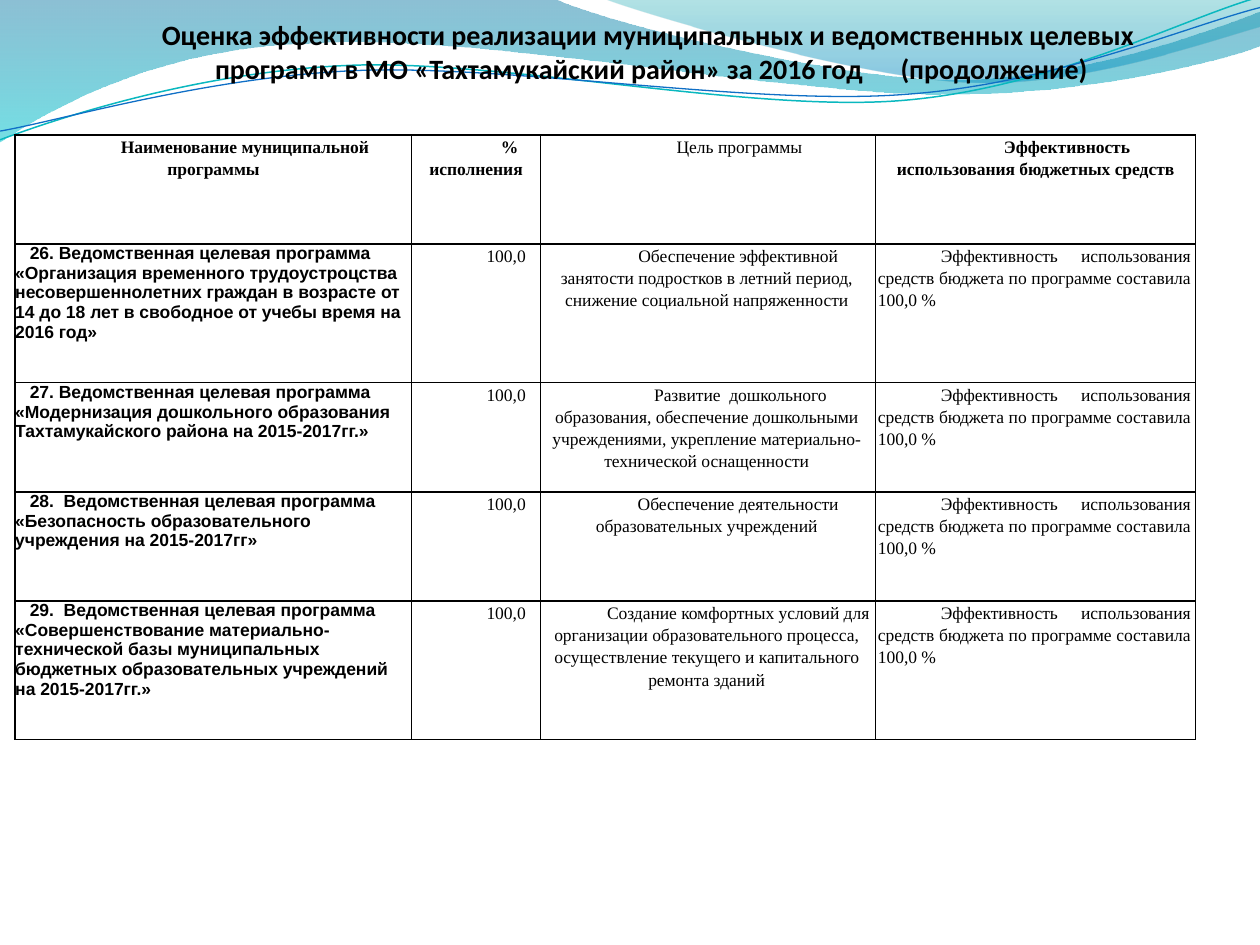
import dataclasses

import pptx
import pptx.dml.color
import pptx.enum.text
import pptx.oxml
import pptx.oxml.ns
import pptx.util

Pt = pptx.util.Pt
Align = pptx.enum.text.PP_ALIGN
qn = pptx.oxml.ns.qn


@dataclasses.dataclass(frozen=True)
class Theme:
    ink: str = "000000"
    teal_line: str = "0AB8BF"
    blue_line: str = "0F6FC6"
    back_wave: tuple = ((0, "0074A1", 45), (1, "00C6CF", 55))
    front_wave: tuple = ((0, "00A1A9", 30), (0.8, "008BBF", 45))
    title_font: str = "Calibri"
    name_font: str = "Arial"
    body_font: str = "Times New Roman"
    title_size: float = 16
    body_size: float = 10
    border: float = 1


THEME = Theme()

BACK_WAVE = [
    (0, 0), (316.8, -0.7),
    (342.7, 12.2, 478.1, 45.4, 545.8, 45.4), (614.2, 45.4, 689.8, 18.7, 720, 6.5),
    (720.7, 25.9), (707.8, 31.7, 626.4, 54.7, 537.1, 54),
    (447.8, 54, 275, 20.2, 185, 24.5), (92.9, 25.9, 33.1, 59.8, -0.7, 81.4),
]
FRONT_WAVE = [
    (344.9, -0.7), (366.5, 7.9, 491, 44.6, 553.7, 46.8),
    (616.3, 49.7, 691.9, 23, 720, 15.1), (720, 0),
]
TEAL_CURVE = [
    (0, 79.9), (34.6, 67, 113.8, 41, 199.4, 37.4),
    (284.4, 33.8, 427, 64.1, 513.4, 57.6), (599.8, 51.1, 675.4, 10.8, 718.6, -1.4),
]
BLUE_CURVE = [
    (0, 74.9), (33.8, 69.1, 118.1, 43.9, 203.8, 40.3),
    (290.2, 36.7, 429.8, 60.5, 516.2, 54), (601.9, 48.2, 677.5, 15.1, 720, 4.3),
]

COLUMN_WIDTHS = (226.5, 73.6, 191.5, 182.9)
ROW_HEIGHTS = (62.4, 79.2, 62.4, 62.4, 79.2)
HEADINGS = (
    ("Наименование муниципальной программы", True),
    (" % исполнения", True),
    ("Цель программы", False),
    ("Эффективность использования бюджетных средств", True),
)
PROGRAMMES = (
    ("26. Ведомственная целевая программа «Организация временного трудоустроцства "
     "несовершеннолетних граждан в возрасте от 14 до 18 лет в свободное от учебы время на 2016 год»",
     "Обеспечение эффективной занятости подростков в летний период, "
     "снижение социальной напряженности"),
    ("27. Ведомственная целевая программа «Модернизация дошкольного образования "
     "Тахтамукайского района на 2015-2017гг.»",
     " Развитие  дошкольного образования, обеспечение дошкольными учреждениями, "
     "укрепление материально-технической оснащенности"),
    ("28.  Ведомственная целевая программа «Безопасность образовательного "
     "учреждения на 2015-2017гг»",
     "Обеспечение деятельности образовательных учреждений"),
    ("29.  Ведомственная целевая программа «Совершенствование материально-технической базы "
     "муниципальных бюджетных образовательных учреждений на 2015-2017гг.»",
     "Создание комфортных условий для организации образовательного процесса, "
     "осуществление текущего и капитального ремонта зданий"),
)
EXECUTION = "100,0"
EFFICIENCY = "Эффективность использования средств бюджета по программе составила 100,0 %"


def rgb(code):
    return pptx.dml.color.RGBColor.from_string(code)


def add_outline(page, steps, close):
    points = [(Pt(x), Pt(y)) for step in steps for x, y in zip(step[::2], step[1::2])]
    builder = page.shapes.build_freeform(*points[0])
    builder.add_line_segments(points[1:], close=close)
    shape = builder.convert_to_shape()
    shape.shadow.inherit = False
    segments = iter(list(shape._element.iter(qn("a:lnTo"))))
    for step in steps[1:]:
        segment = next(segments)
        if len(step) == 6:
            curve = pptx.oxml.parse_xml(f'<a:cubicBezTo {pptx.oxml.ns.nsdecls("a")}/>')
            segment.addprevious(curve)
            for part in (segment, next(segments), next(segments)):
                curve.append(part[0])
                part.getparent().remove(part)
    return shape


def add_wave(page, steps, stops):
    shape = add_outline(page, steps, True)
    shape.line.fill.background()
    shape.fill.gradient()
    shape.fill.gradient_angle = 270
    for stop, (position, code, _) in zip(shape.fill.gradient_stops, stops):
        stop.position = position
        stop.color.rgb = rgb(code)
    colours = shape._element.spPr.iter(qn("a:srgbClr"))
    for colour, (_, _, opacity) in zip(list(colours), stops):
        colour.append(pptx.oxml.parse_xml(
            f'<a:alpha {pptx.oxml.ns.nsdecls("a")} val="{opacity * 1000}"/>'))


def add_curve(page, steps, code, width):
    shape = add_outline(page, steps, False)
    shape.fill.background()
    shape.line.color.rgb = rgb(code)
    shape.line.width = Pt(width)


def add_span(para, text, font, size, bold):
    span = para.add_run()
    span.text = text
    span.font.name = font
    span.font.size = Pt(size)
    span.font.bold = bold
    span.font.color.rgb = rgb(THEME.ink)
    return span


def draw_borders(cell):
    properties = cell._tc.get_or_add_tcPr()
    for side in "LRTB":
        properties.append(pptx.oxml.parse_xml(
            f'<a:ln{side} {pptx.oxml.ns.nsdecls("a")} w="{Pt(THEME.border)}"><a:solidFill>'
            f'<a:srgbClr val="{THEME.ink}"/></a:solidFill></a:ln{side}>'))
    cell.fill.background()


def fill_cell(cell, text, font=THEME.body_font, bold=False, align=Align.CENTER,
              indent=36, spacing=1.15, left=1.4, right=2.9):
    draw_borders(cell)
    cell.margin_left, cell.margin_right = Pt(left), Pt(right)
    cell.margin_top = cell.margin_bottom = 0
    para = cell.text_frame.paragraphs[0]
    para.alignment = align
    para.line_spacing = spacing
    layout = para._p.get_or_add_pPr()
    layout.set("marL", "0")
    layout.set("indent", str(Pt(indent)))
    add_span(para, text, font, THEME.body_size, bold)


def add_programme_table(page):
    frame = page.shapes.add_table(
        len(ROW_HEIGHTS), len(COLUMN_WIDTHS), Pt(8.7), Pt(77.1),
        Pt(sum(COLUMN_WIDTHS)), Pt(sum(ROW_HEIGHTS)))
    table = frame.table
    table.first_row = table.horz_banding = False
    for column, width in zip(table.columns, COLUMN_WIDTHS):
        column.width = Pt(width)
    for row, height in zip(table.rows, ROW_HEIGHTS):
        row.height = Pt(height)
    for index, (text, bold) in enumerate(HEADINGS):
        fill_cell(table.cell(0, index), text, bold=bold, left=2.9)
    for index, (name, goal) in enumerate(PROGRAMMES, start=1):
        fill_cell(table.cell(index, 0), name, THEME.name_font, True, Align.LEFT, 8.3, 1, 0, 0)
        fill_cell(table.cell(index, 1), EXECUTION)
        fill_cell(table.cell(index, 2), goal)
        fill_cell(table.cell(index, 3), EFFICIENCY, align=Align.JUSTIFY)


def set_title(page):
    box = page.shapes.title
    box.left, box.top, box.width, box.height = Pt(48.2), Pt(3.4), Pt(648), Pt(45.3)
    frame = box.text_frame
    frame.auto_size = pptx.enum.text.MSO_AUTO_SIZE.NONE
    frame.word_wrap = True
    frame.vertical_anchor = pptx.enum.text.MSO_ANCHOR.BOTTOM
    frame.margin_left = frame.margin_right = frame.margin_bottom = 0
    frame.margin_top = Pt(3.6)
    para = frame.paragraphs[0]
    para.alignment = Align.CENTER
    style = (THEME.title_font, THEME.title_size, True)
    add_span(para, "Оценка эффективности реализации муниципальных и ведомственных целевых ", *style)
    para.add_line_break()
    add_span(para, "программ в МО «Тахтамукайский район» за 2016 год", *style)
    gap = add_span(para, " ", *style)
    gap._r.get_or_add_rPr().set("spc", "1770")
    add_span(para, "(продолжение)", *style)
    page.shapes._spTree.append(box._element)


def main():
    deck = pptx.Presentation()
    deck.slide_width, deck.slide_height = Pt(720), Pt(540)
    page = deck.slides.add_slide(deck.slide_layouts[5])
    add_wave(page, BACK_WAVE, THEME.back_wave)
    add_wave(page, FRONT_WAVE, THEME.front_wave)
    add_curve(page, TEAL_CURVE, THEME.teal_line, 0.85)
    add_curve(page, BLUE_CURVE, THEME.blue_line, 0.75)
    add_programme_table(page)
    set_title(page)
    deck.save("out.pptx")


if __name__ == "__main__":
    main()
